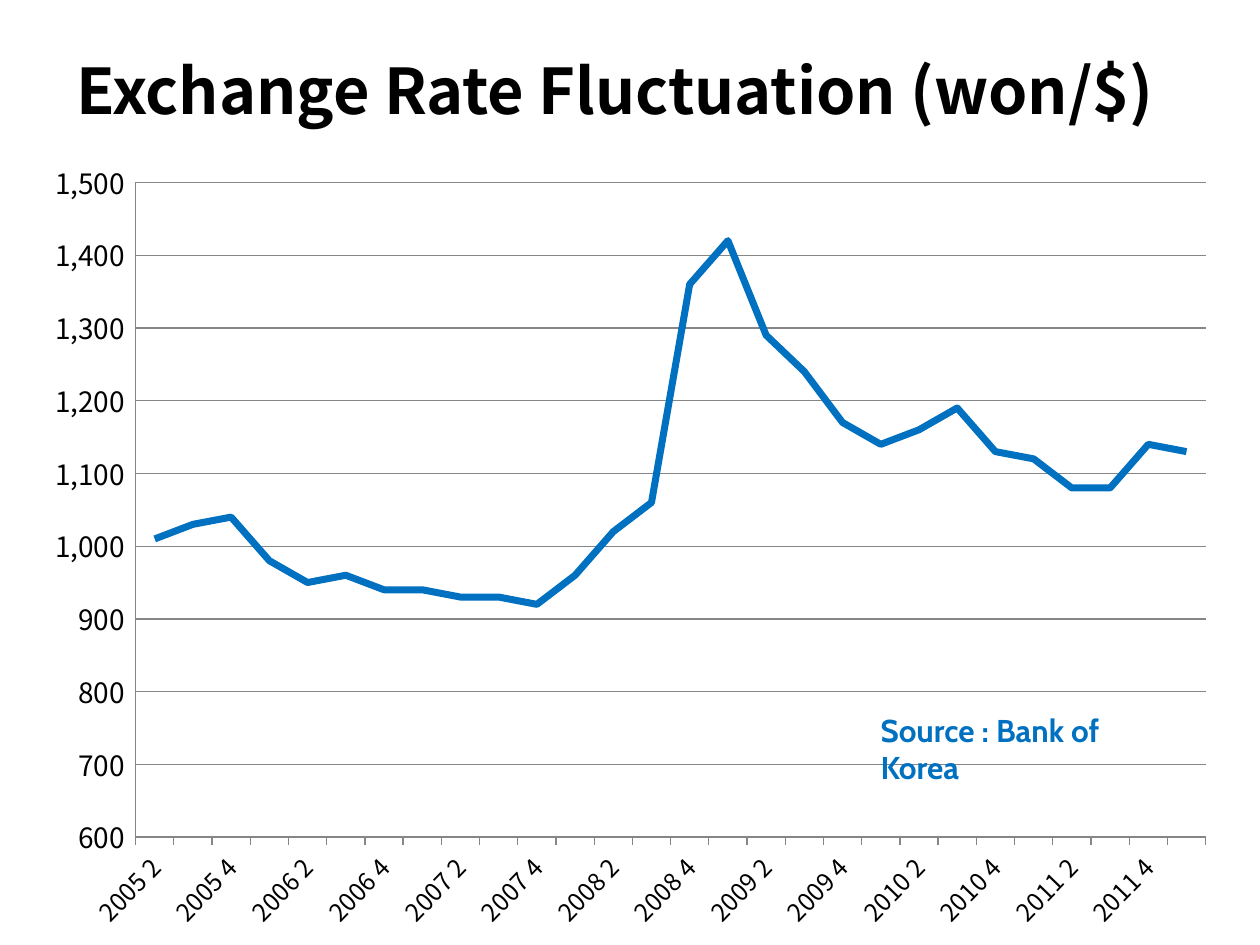
from lxml import etree
from pptx import Presentation
from pptx.chart.data import CategoryChartData
from pptx.dml.color import RGBColor
from pptx.enum.chart import XL_CHART_TYPE, XL_TICK_MARK
from pptx.enum.text import MSO_ANCHOR, PP_ALIGN
from pptx.oxml import parse_xml
from pptx.oxml.ns import nsdecls, qn
from pptx.util import Inches, Pt

LINE = XL_CHART_TYPE.LINE
TICK_NONE, TICK_OUT = XL_TICK_MARK.NONE, XL_TICK_MARK.OUTSIDE
CENTER, MIDDLE = PP_ALIGN.CENTER, MSO_ANCHOR.MIDDLE

WIDTH, HEIGHT = 10, 7.5
SANS, ACCENT_FONT = "Noto Sans CJK KR", "Cabin"
COLORS = {"text": "000000", "accent": "0070C0", "grid": "868686"}

# Boxes as shares of the slide: left, top, width, height
TITLE_BOX = (0.042, 0.023, 0.892, 0.144)
CHART_BOX = (0.025, 0.156, 0.95, 0.844)
SOURCE_BOX = (0.689, 0.746, 0.26, 0.053)
# Plot area as shares of the chart
PLOT = {"x": 0.087, "y": 0.044, "w": 0.894, "h": 0.821}
LABEL_ANGLE, LABEL_STEP = 46, 2

FIRST_YEAR, FIRST_QUARTER = 2005, 2
RATES = [1010, 1030, 1040,
         980, 950, 960, 940,
         940, 930, 930, 920,
         960, 1020, 1060, 1360,
         1420, 1290, 1240, 1170,
         1140, 1160, 1190, 1130,
         1120, 1080, 1080, 1140,
         1130]


def place(box):
    return [Inches(round(share * side, 2))
            for share, side in zip(box, (WIDTH, HEIGHT) * 2)]


def set_attrs(obj, values):
    for name, value in values.items():
        setattr(obj, name, value)


def style_font(font, size, color="text", name=SANS, bold=False):
    set_attrs(font, {"size": Pt(size), "name": name, "bold": bold})
    font.color.rgb = RGBColor.from_string(COLORS[color])


def style_line(line, color, width):
    line.color.rgb = RGBColor.from_string(COLORS[color])
    line.width = Pt(width)


def quarter_labels(count):
    start = FIRST_YEAR * 4 + FIRST_QUARTER - 1
    return [f"{q // 4} {q % 4 + 1}" for q in range(start, start + count)]


def add_title(slide, text):
    sp = slide.shapes.title
    set_attrs(sp, dict(zip(("left", "top", "width", "height"), place(TITLE_BOX))))
    tf = sp.text_frame
    tf.text = text
    tf.vertical_anchor = MIDDLE
    p = tf.paragraphs[0]
    p.alignment = CENTER
    style_font(p.runs[0].font, 36, bold=True)


def set_plot_layout(chart):
    """Fix the inner plot area inside the chart."""
    modes = '<c:layoutTarget val="inner"/><c:xMode val="edge"/><c:yMode val="edge"/>'
    sizes = "".join(f'<c:{key} val="{val}"/>' for key, val in PLOT.items())
    layout = parse_xml(f'<c:layout {nsdecls("c")}><c:manualLayout>{modes}{sizes}'
                       '</c:manualLayout></c:layout>')
    area = chart._chartSpace.chart.plotArea
    for old in area.findall(qn("c:layout")):
        area.remove(old)
    area.insert(0, layout)


def slant_labels(axis, degrees, step):
    """Turn the category labels upwards and show every step-th one."""
    ax = axis._element
    body = ax.find(qn("c:txPr")).find(qn("a:bodyPr"))
    body.set("rot", str(-degrees * 60000))
    body.set("vert", "horz")
    skip = etree.Element(qn("c:tickLblSkip"), val=str(step))
    ax.find(qn("c:noMultiLvlLbl")).addprevious(skip)


def add_rate_chart(slide):
    data = CategoryChartData()
    data.categories = quarter_labels(len(RATES))
    data.add_series("Series 1", RATES)
    chart = slide.shapes.add_chart(LINE, *place(CHART_BOX), data).chart
    set_attrs(chart, {"has_legend": False, "has_title": False})
    style_font(chart.font, 10)

    value, category = chart.value_axis, chart.category_axis
    set_attrs(value, {"minimum_scale": 600, "maximum_scale": 1500,
                      "major_unit": 100, "has_major_gridlines": True,
                      "major_tick_mark": TICK_NONE})
    set_attrs(value.tick_labels, {"number_format": r"#,##0_);[Red]\(#,##0\)",
                                  "number_format_is_linked": False})
    category.major_tick_mark = TICK_OUT
    for axis, size in ((value, 16), (category, 14)):
        axis.minor_tick_mark = TICK_NONE
        style_font(axis.tick_labels.font, size)
        style_line(axis.format.line, "grid", 0.75)
    style_line(value.major_gridlines.format.line, "grid", 0.75)
    slant_labels(category, LABEL_ANGLE, LABEL_STEP)
    set_plot_layout(chart)

    rates = chart.plots[0].series[0]
    rates.smooth = False
    style_line(rates.format.line, "accent", 4)


def add_source(slide, text):
    tf = slide.shapes.add_textbox(*place(SOURCE_BOX)).text_frame
    tf.word_wrap = True
    r = tf.paragraphs[0].add_run()
    r.text = text
    style_font(r.font, 18, "accent", ACCENT_FONT, bold=True)


def main():
    prs = Presentation()
    set_attrs(prs, {"slide_width": Inches(WIDTH), "slide_height": Inches(HEIGHT)})
    slide = prs.slides.add_slide(prs.slide_layouts.get_by_name("Title Only"))
    add_title(slide, "Exchange Rate Fluctuation (won/$)")
    add_rate_chart(slide)
    add_source(slide, "Source : Bank of Korea")
    prs.save("out.pptx")


if __name__ == "__main__":
    main()
